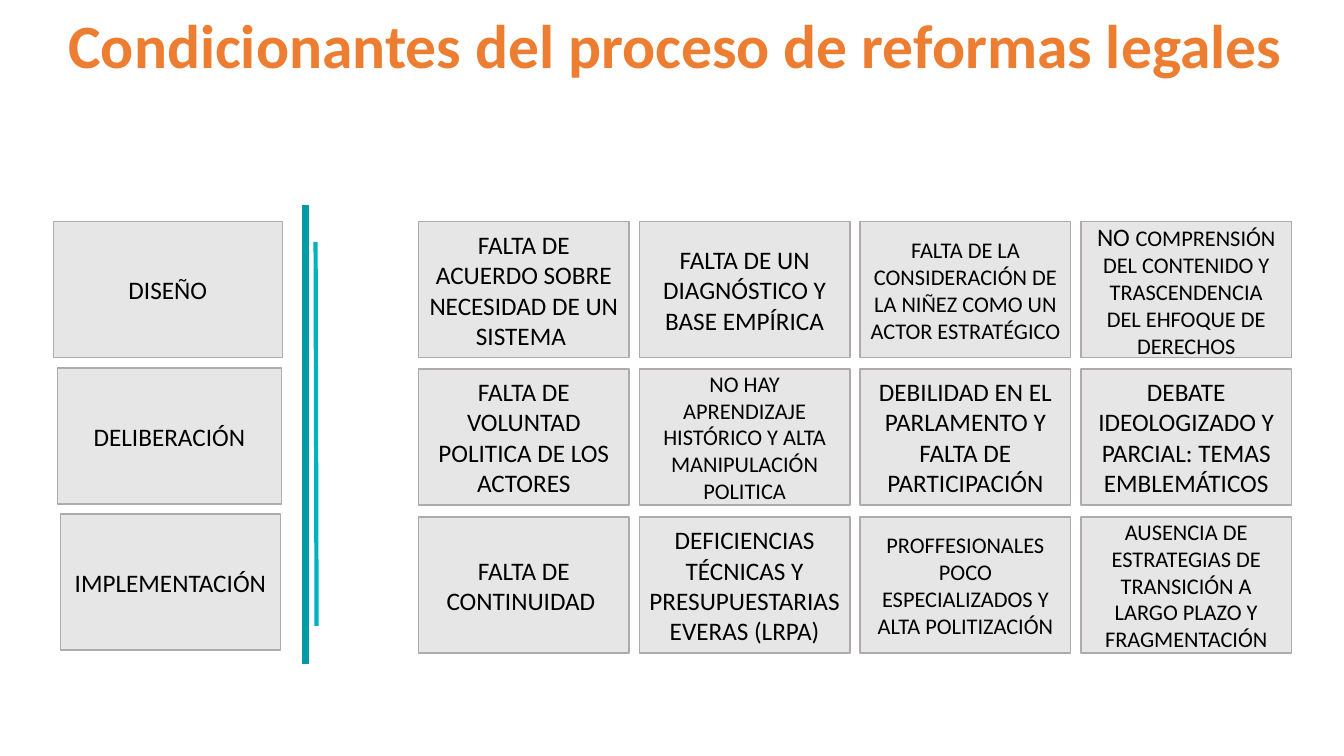
"""Build the slide on what conditions the process of legal reform."""
from pptx import Presentation
from pptx.dml.color import RGBColor
from pptx.enum.shapes import MSO_CONNECTOR, MSO_SHAPE
from pptx.enum.text import MSO_ANCHOR, MSO_AUTO_SIZE, PP_ALIGN
from pptx.oxml.ns import qn
from pptx.util import Inches, Pt
from lxml.etree import SubElement


def rgb(value):
    return RGBColor.from_string(value)


def add_box(left, top, width, runs):
    sp = s.shapes.add_shape(MSO_SHAPE.RECTANGLE, Inches(left), Inches(top),
                            Inches(width), Inches(1.35))
    sp.shadow.inherit = False
    sp.fill.solid()
    sp.fill.fore_color.rgb = rgb("E7E6E6")
    sp.line.color.rgb = rgb("AFABAB")
    sp.line.width = Pt(1)
    tf = sp.text_frame
    tf.word_wrap = True
    tf.vertical_anchor = MSO_ANCHOR.MIDDLE
    p = tf.paragraphs[0]
    p.alignment = PP_ALIGN.CENTER
    for text, size in runs:
        r = p.add_run()
        r.text = text
        r.font.color.rgb = rgb("000000")
        for name, value in {"name": "Calibri", "size": Pt(size)}.items():
            setattr(r.font, name, value)


prs = Presentation()
prs.slide_width, prs.slide_height = Inches(13.33), Inches(7.5)
s = prs.slides.add_slide(prs.slide_layouts[6])

title = s.shapes.add_textbox(Inches(0.58), Inches(0.02), Inches(12.41), Inches(0.84))
tf = title.text_frame
tf.word_wrap = False
tf.auto_size = MSO_AUTO_SIZE.SHAPE_TO_FIT_TEXT
r = tf.paragraphs[0].add_run()
r.text = "Condicionantes del proceso de reformas legales"
r.font.color.rgb = rgb("ED7D31")
for name, value in {"name": "Calibri", "size": Pt(44), "bold": True}.items():
    setattr(r.font, name, value)

phases = [
    ("DISEÑO", 0.53, 2.27),
    ("DELIBERACIÓN", 0.57, 2.22),
    ("IMPLEMENTACIÓN", 0.6, 2.18),
]
for row, (phase, left, width) in enumerate(phases):
    add_box(left, 2.2 + 1.45 * row, width, [(phase, 18)])

dividers = [
    (3.03, 2.03, 3.03, 6.59, "009BA6", 4.5),
    (3.13, 2.4, 3.14, 6.21, "00B2C0", 3),
]
for x1, y1, x2, y2, color, weight in dividers:
    line = s.shapes.add_connector(MSO_CONNECTOR.STRAIGHT, Inches(x1), Inches(y1),
                                  Inches(x2), Inches(y2))
    line.line.color.rgb = rgb(color)
    line.line.width = Pt(weight)
    SubElement(line._element.spPr, qn("a:effectLst"))

obstacles = [
    [
        [("FALTA DE ACUERDO SOBRE NECESIDAD DE UN SISTEMA ", 18)],
        [("FALTA DE UN DIAGNÓSTICO Y BASE EMPÍRICA", 18)],
        [("FALTA DE LA CONSIDERACIÓN DE LA NIÑEZ COMO UN ACTOR ESTRATÉGICO ", 16)],
        [("NO ", 18),
         ("COMPRENSIÓN DEL CONTENIDO Y TRASCENDENCIA DEL EHFOQUE DE DERECHOS", 16)],
    ],
    [
        [("FALTA DE VOLUNTAD POLITICA DE LOS ACTORES", 18)],
        [("NO HAY APRENDIZAJE HISTÓRICO Y ALTA MANIPULACIÓN POLITICA", 16)],
        [("DEBILIDAD EN EL PARLAMENTO Y FALTA DE PARTICIPACIÓN", 18)],
        [("DEBATE IDEOLOGIZADO Y PARCIAL: TEMAS EMBLEMÁTICOS", 18)],
    ],
    [
        [("FALTA DE CONTINUIDAD ", 18)],
        [("DEFICIENCIAS TÉCNICAS Y PRESUPUESTARIASEVERAS (LRPA)", 18)],
        [("PROFFESIONALES POCO ESPECIALIZADOS Y ALTA POLITIZACIÓN", 16)],
        [("AUSENCIA DE ESTRATEGIAS DE TRANSICIÓN A LARGO PLAZO Y FRAGMENTACIÓN", 16)],
    ],
]
for top, cells in zip((2.2, 3.66, 5.13), obstacles):
    for col, runs in enumerate(cells):
        add_box(4.15 + 2.19 * col, top, 2.09, runs)

prs.save("out.pptx")
